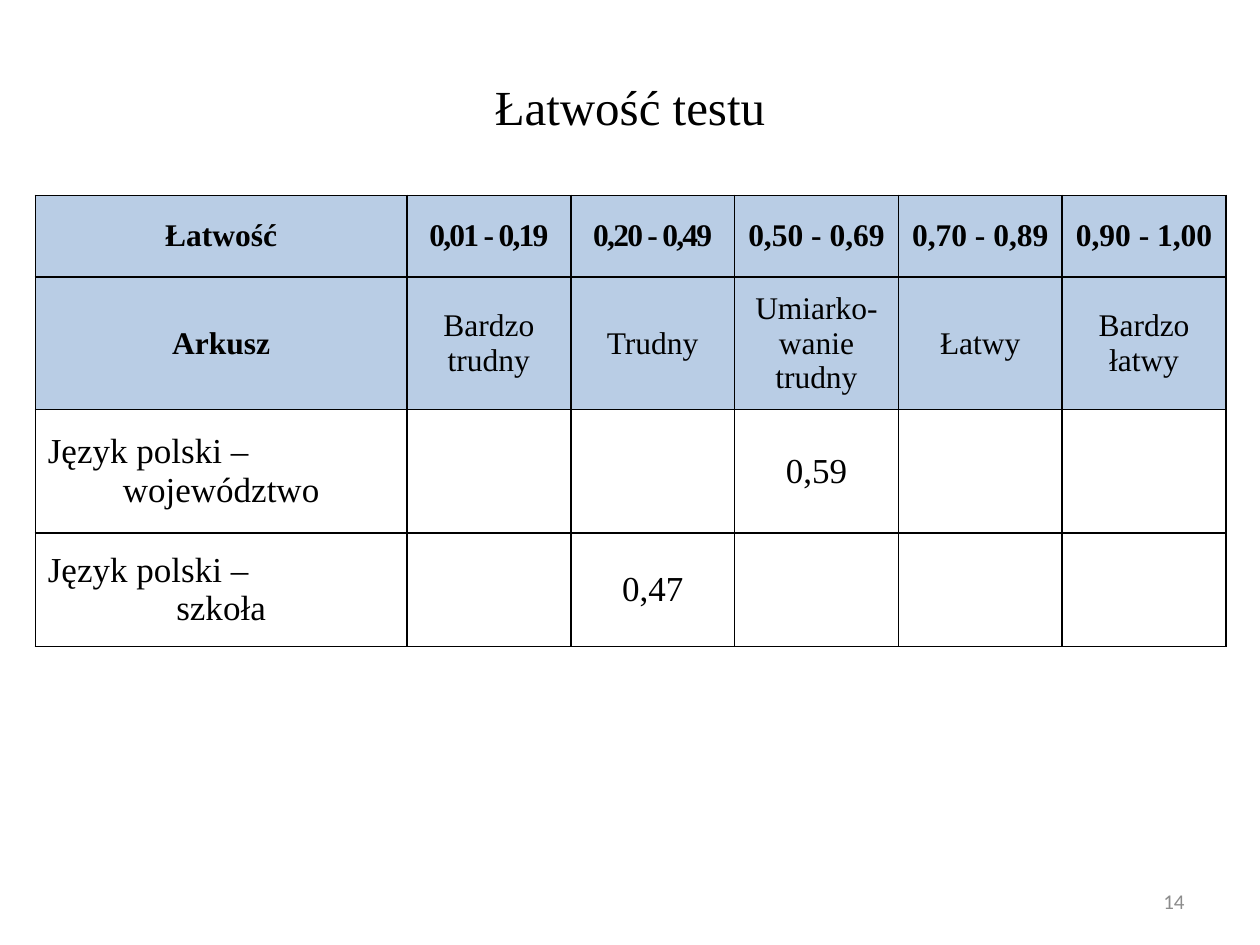
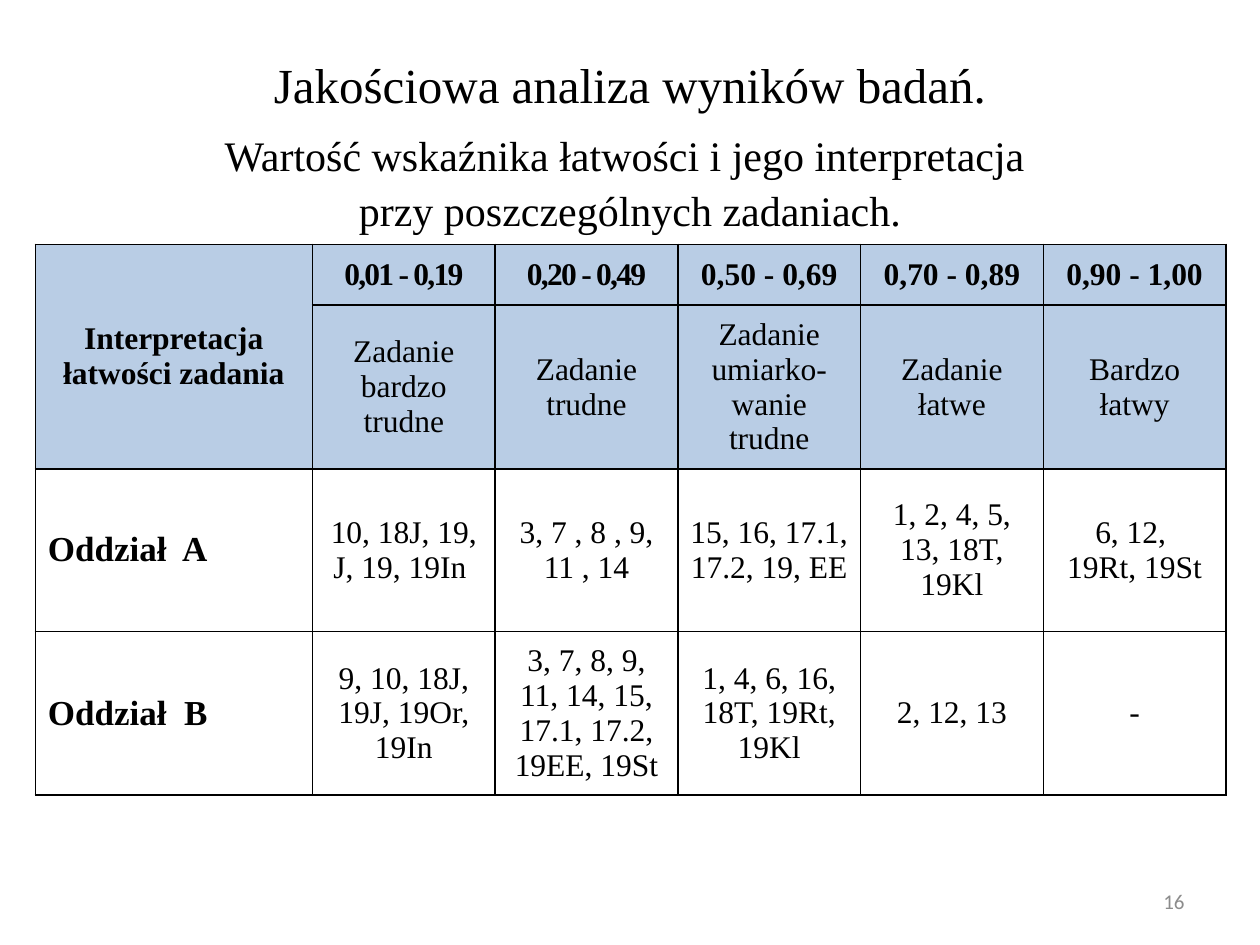
from lxml import etree
from pptx import Presentation
from pptx.dml.color import RGBColor
from pptx.enum.text import MSO_ANCHOR, PP_ALIGN
from pptx.oxml.ns import qn
from pptx.util import Inches, Pt

BLACK = RGBColor(0x00, 0x00, 0x00)
GREY = RGBColor(0x8C, 0x8C, 0x8C)
HEADER_BLUE = RGBColor(0xB9, 0xCD, 0xE5)
SERIF = "Times New Roman"
SANS = "Calibri"
LEFT, CENTER, RIGHT = PP_ALIGN.LEFT, PP_ALIGN.CENTER, PP_ALIGN.RIGHT
TOP, MIDDLE = MSO_ANCHOR.TOP, MSO_ANCHOR.MIDDLE

TABLE_LEFT = 0.28
BORDER_SIDES = ("a:lnL", "a:lnR", "a:lnT", "a:lnB")
HEADER_ROWS = 2
RANGES = ["0,01 - 0,19", "0,20 - 0,49", "0,50 - 0,69", "0,70 - 0,89", "0,90 - 1,00"]
TIGHT_RANGES = RANGES[:2]


def style_paragraph(para, size, align=CENTER, bold=False, font=SERIF, color=BLACK):
    para.alignment = align
    for span in para.runs:
        span.font.name = font
        span.font.size = Pt(size)
        span.font.bold = bold
        span.font.color.rgb = color


def add_text_box(page, left, top, width, height, text, anchor):
    box = page.shapes.add_textbox(Inches(left), Inches(top), Inches(width), Inches(height))
    frame = box.text_frame
    frame.word_wrap = True
    frame.vertical_anchor = anchor
    frame.text = text
    return frame


def add_title(page, top, height, title, subtitle=()):
    frame = add_text_box(page, 0, top, 10, height, "\n".join([title, *subtitle]), TOP)
    frame.margin_left = frame.margin_right = Inches(0.59)
    frame.margin_top, frame.margin_bottom = Inches(0.39), Inches(0.2)
    for index, para in enumerate(frame.paragraphs):
        style_paragraph(para, 24 if index else 28)
        para.line_spacing = 1.1
    if subtitle:
        frame.paragraphs[0].space_after = Pt(6)


def add_page_number(page, number):
    frame = add_text_box(page, 7.17, 6.95, 2.33, 0.4, str(number), MIDDLE)
    style_paragraph(frame.paragraphs[0], 12, RIGHT, font=SANS, color=GREY)


def draw_borders(cell):
    properties = cell._tc.get_or_add_tcPr()
    for index, side in enumerate(BORDER_SIDES):
        line = etree.Element(qn(side), w=str(Pt(1)))
        fill = etree.SubElement(line, qn("a:solidFill"))
        etree.SubElement(fill, qn("a:srgbClr"), val=str(BLACK))
        properties.insert(index, line)


def fill_cell(cell, text, size, bold, header, first_column):
    cell.vertical_anchor = MIDDLE
    if header:
        cell.fill.solid()
        cell.fill.fore_color.rgb = HEADER_BLUE
    else:
        cell.fill.background()
    draw_borders(cell)
    cell.text_frame.text = text
    for index, para in enumerate(cell.text_frame.paragraphs):
        # Row labels start at the left; their second line is centred
        label = first_column and not header and index == 0
        style_paragraph(para, size, LEFT if label else CENTER, bold)
        if text in TIGHT_RANGES:
            for span in para.runs:
                span.font._element.set("spc", "-100")


def add_score_table(page, top, widths, heights, rows, value_size, bold_labels):
    frame = page.shapes.add_table(len(rows), len(widths), Inches(TABLE_LEFT), Inches(top),
                                  Inches(sum(widths)), Inches(sum(heights)))
    table = frame.table
    table.first_row = table.horz_banding = False
    for column, width in zip(table.columns, widths):
        column.width = Inches(width)
    for row, height in zip(table.rows, heights):
        row.height = Inches(height)
    for row_index, texts in enumerate(rows):
        header = row_index < HEADER_ROWS
        for column_index, text in enumerate(texts):
            first_column = column_index == 0
            if header:
                size, bold = 18, row_index == 0 or first_column
            else:
                size, bold = (20 if first_column else value_size), first_column and bold_labels
            fill_cell(table.cell(row_index, column_index), text, size, bold, header, first_column)
    return table


def build_test_page(page):
    add_page_number(page, 14)
    add_title(page, 0.21, 1.07, "Łatwość testu")
    rows = [
        ["Łatwość", *RANGES],
        ["Arkusz", "Bardzo trudny", "Trudny", "Umiarko-wanie trudny", "Łatwy", "Bardzo łatwy"],
        ["Język polski –\nwojewództwo", "", "", "0,59", "", ""],
        ["Język polski –\nszkoła", "", "0,47", "", "", ""],
    ]
    add_score_table(page, 1.55, [2.95] + [1.3] * 5, [0.65, 1.05, 0.98, 0.9], rows,
                    value_size=20, bold_labels=False)


def build_tasks_page(page):
    add_page_number(page, 16)
    add_title(page, 0, 1.96, "Jakościowa analiza wyników badań.",
              ["Wartość wskaźnika łatwości i jego interpretacja ", "przy poszczególnych zadaniach."])
    rows = [
        ["Interpretacja łatwości zadania", *RANGES],
        ["", "Zadanie bardzo trudne", "Zadanie trudne", "Zadanie umiarko-wanie trudne",
         "Zadanie łatwe", "Bardzo łatwy"],
        ["Oddział  A", "10, 18J, 19, J, 19, 19In ", "3, 7 , 8 , 9, 11 , 14",
         "15, 16, 17.1, 17.2, 19, EE", "1, 2, 4, 5, 13, 18T, 19Kl", "6, 12, \n19Rt, 19St"],
        ["Oddział  B", "9, 10, 18J, 19J, 19Or, 19In",
         "3, 7, 8, 9, 11, 14, 15, 17.1, 17.2, 19EE, 19St", "1, 4, 6, 16, 18T, 19Rt, 19Kl",
         "2, 12, 13", "-"],
    ]
    table = add_score_table(page, 1.94, [2.2] + [1.45] * 5, [0.48, 1.3, 1.29, 1.3], rows,
                            value_size=18, bold_labels=True)
    table.cell(0, 0).merge(table.cell(1, 0))


def main():
    deck = Presentation()
    deck.slide_width, deck.slide_height = Inches(10), Inches(7.5)
    for build_page in (build_test_page, build_tasks_page):
        build_page(deck.slides.add_slide(deck.slide_layouts[6]))
    deck.save("out.pptx")


if __name__ == "__main__":
    main()
